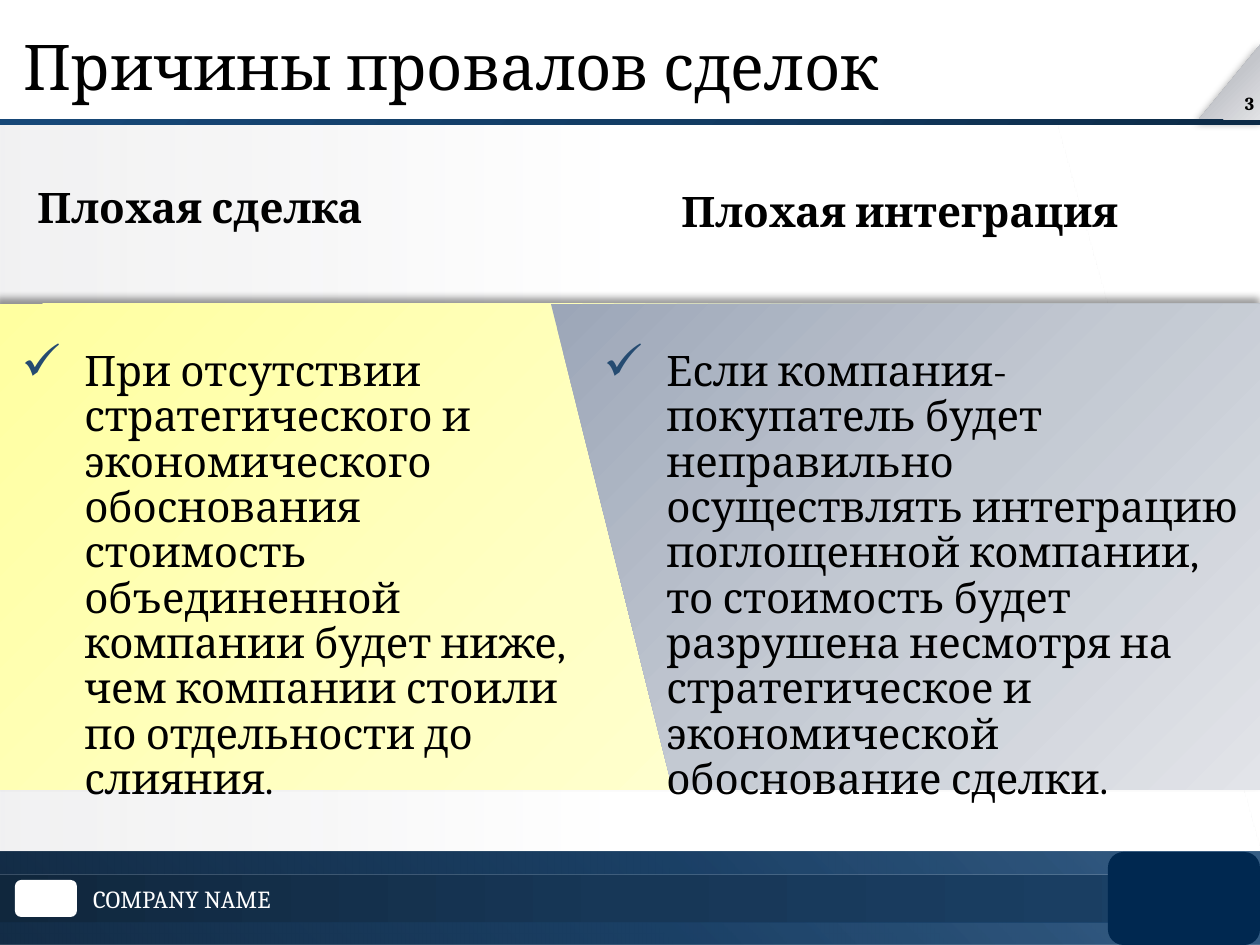
from lxml import etree
from pptx import Presentation
from pptx.dml.color import RGBColor
from pptx.enum.shapes import MSO_SHAPE
from pptx.enum.text import MSO_ANCHOR, PP_ALIGN
from pptx.oxml.ns import qn
from pptx.util import Pt

SCALE = 914400 / 126
WIDTH, HEIGHT = 1260, 945
FONT = "Cambria"

TITLE = "Причины провалов сделок"
SLIDE_NUMBER = "3"
COMPANY = "COMPANY NAME"
HEADINGS = [
    ("Плохая сделка", (25, 175, 566, 74)),
    ("Плохая интеграция", (669, 179, 566, 74)),
]
REASONS = [
    ("При отсутствии стратегического и экономического обоснования стоимость "
     "объединенной компании будет ниже, чем компании стоили по отдельности "
     "до слияния.", (9, 344, 582, 396)),
    ("Если компания-покупатель будет неправильно осуществлять интеграцию "
     "поглощенной компании, то стоимость будет разрушена несмотря на "
     "стратегическое и экономической обоснование сделки.", (591, 344, 669, 377)),
]

# Gradient stops: position %, colour, opacity %
BACKDROP = [(0, "FFFFFF", 100), (51, "FFFFFF", 100), (100, "EFEFF0", 84)]
FOOTER_EDGE = [(0, "132C46", 100), (50, "1A3F64", 100), (100, "1F4B77", 89)]
FOOTER_MIDDLE = [(0, "10273D", 100), (50, "173757", 100), (100, "1B4167", 100)]
CORNER = [(0, "9DA2AB", 100), (50, "C4C6CB", 100), (100, "E2E3E6", 100)]
RULE = [(0, "0D2B47", 100), (50, "133D65", 100), (100, "174878", 100)]
YELLOW = [(0, "FFFFA0", 100), (50, "FFFFC5", 100), (100, "FFFFE3", 100)]
GREY_BLUE = [(0, "9CA6B8", 100), (50, "C3C9D2", 100), (100, "E2E4E9", 100)]

FOOTER_BANDS = [
    ((0, 852, WIDTH, 23), FOOTER_EDGE, None),
    ((0, 875, WIDTH, 48), FOOTER_MIDDLE, 0),
    ((0, 923, WIDTH, 22), FOOTER_EDGE, None),
]


def px(length):
    return round(length * SCALE)


def color(hex_string):
    return RGBColor.from_string(hex_string)


def add_child(parent, tag, **attributes):
    child = etree.SubElement(parent, qn(tag))
    for name, value in attributes.items():
        child.set(name, str(value))
    return child


def add_color(parent, hex_string, opacity):
    element = add_child(parent, "a:srgbClr", val=hex_string)
    if opacity < 100:
        add_child(element, "a:alpha", val=opacity * 1000)


def set_gradient(shape, stops, angle):
    """Fill with a linear gradient, or a radial one from the bottom left if angle is None."""
    shape.fill.gradient()
    gradient = shape.element.spPr.find(qn("a:gradFill"))
    gradient.clear()
    gradient.set("rotWithShape", "1")
    stop_list = add_child(gradient, "a:gsLst")
    for position, hex_string, opacity in stops:
        add_color(add_child(stop_list, "a:gs", pos=position * 1000), hex_string, opacity)
    if angle is None:
        radial = add_child(gradient, "a:path")
        radial.set("path", "circle")
        add_child(radial, "a:fillToRect", t=100000, r=100000)
    else:
        add_child(gradient, "a:lin", ang=angle * 60000, scaled=0)


def finish(shape, fill, angle=0, shadow=None):
    """Apply fill (hex or stops) and an optional shadow of (blur pt, distance pt, direction)."""
    if isinstance(fill, str):
        shape.fill.solid()
        shape.fill.fore_color.rgb = color(fill)
    else:
        set_gradient(shape, fill, angle)
    shape.line.fill.background()
    shape.shadow.inherit = False
    if shadow:
        blur, distance, direction = shadow
        effects = shape.element.spPr.find(qn("a:effectLst"))
        outer = add_child(effects, "a:outerShdw", blurRad=Pt(blur), dist=Pt(distance),
                          dir=direction * 60000, algn="ctr", rotWithShape=0)
        add_color(outer, "000000", 40)
    return shape


def add_shape(slide, kind, box, fill, angle=0, shadow=None):
    shape = slide.shapes.add_shape(kind, *map(px, box))
    return finish(shape, fill, angle, shadow)


def add_polygon(slide, points, fill, angle):
    builder = slide.shapes.build_freeform(*points[0], scale=SCALE)
    builder.add_line_segments(points[1:], close=True)
    return finish(builder.convert_to_shape(), fill, angle)


def add_text(slide, text, box, size, bold=False, hex_string="000000", anchor=MSO_ANCHOR.TOP):
    frame = slide.shapes.add_textbox(*map(px, box)).text_frame
    frame.word_wrap = True
    frame.vertical_anchor = anchor
    paragraph = frame.paragraphs[0]
    paragraph.text = text
    font = paragraph.font
    font.name, font.size, font.bold = FONT, Pt(size), bold
    font.color.rgb = color(hex_string)
    return frame


def set_check_bullet(paragraph):
    properties = paragraph._p.get_or_add_pPr()
    properties.set("marL", "457200")
    properties.set("indent", "-457200")
    bullet = [etree.Element(qn(tag)) for tag in ("a:buClr", "a:buSzPct", "a:buChar")]
    add_color(bullet[0], "254B71", 100)
    bullet[1].set("val", "120000")
    bullet[2].set("char", "✓")
    default_run = properties.find(qn("a:defRPr"))
    for element in bullet:
        default_run.addprevious(element)


def add_frame(slide):
    add_polygon(slide, [(0, 123), (1055, 123), (WIDTH, 853), (0, 853)], BACKDROP, 180)
    for box, stops, angle in FOOTER_BANDS:
        add_shape(slide, MSO_SHAPE.RECTANGLE, box, stops, angle)
    add_shape(slide, MSO_SHAPE.ROUNDED_RECTANGLE, (1108, 852, 152, 93), "002850")
    add_shape(slide, MSO_SHAPE.ROUNDED_RECTANGLE, (15, 880, 62, 37), "FFFFFF")
    company = add_text(slide, COMPANY, (93, 880, 220, 37), 14,
                       hex_string="FFFFFF", anchor=MSO_ANCHOR.MIDDLE)
    company.margin_left = company.margin_top = company.margin_bottom = 0

    corner = add_shape(slide, MSO_SHAPE.ISOSCELES_TRIANGLE, (1196, 45, 64, 78),
                       CORNER, 45, shadow=(5, 0, 0))
    corner.adjustments[0] = 1
    add_shape(slide, MSO_SHAPE.RECTANGLE, (0, 120, WIDTH, 5), RULE, 225)
    number = add_text(slide, SLIDE_NUMBER, (1206, 86, 54, 35), 10.5, bold=True)
    number.margin_left, number.margin_right = 0, px(6)
    number.paragraphs[0].alignment = PP_ALIGN.RIGHT


def add_content(slide):
    add_text(slide, TITLE, (11, 21, 912, 89), 36, anchor=MSO_ANCHOR.MIDDLE)
    add_shape(slide, MSO_SHAPE.RECTANGLE, (-4, 304, 1264, 486), YELLOW, 45,
              shadow=(4, 3, 270))
    add_polygon(slide, [(551, 304), (WIDTH, 304), (WIDTH, 790), (673, 790)], GREY_BLUE, 45)
    for text, box in HEADINGS:
        heading = add_text(slide, text, box, 24, bold=True)
        heading.paragraphs[0].space_before = Pt(4.8)
    for text, box in REASONS:
        paragraph = add_text(slide, text, box, 24).paragraphs[0]
        paragraph.line_spacing = 0.9
        paragraph.space_before = paragraph.space_after = Pt(6)
        set_check_bullet(paragraph)


def main():
    presentation = Presentation()
    presentation.slide_width, presentation.slide_height = px(WIDTH), px(HEIGHT)
    slide = presentation.slides.add_slide(presentation.slide_layouts[6])
    add_frame(slide)
    add_content(slide)
    presentation.save("out.pptx")


if __name__ == "__main__":
    main()
